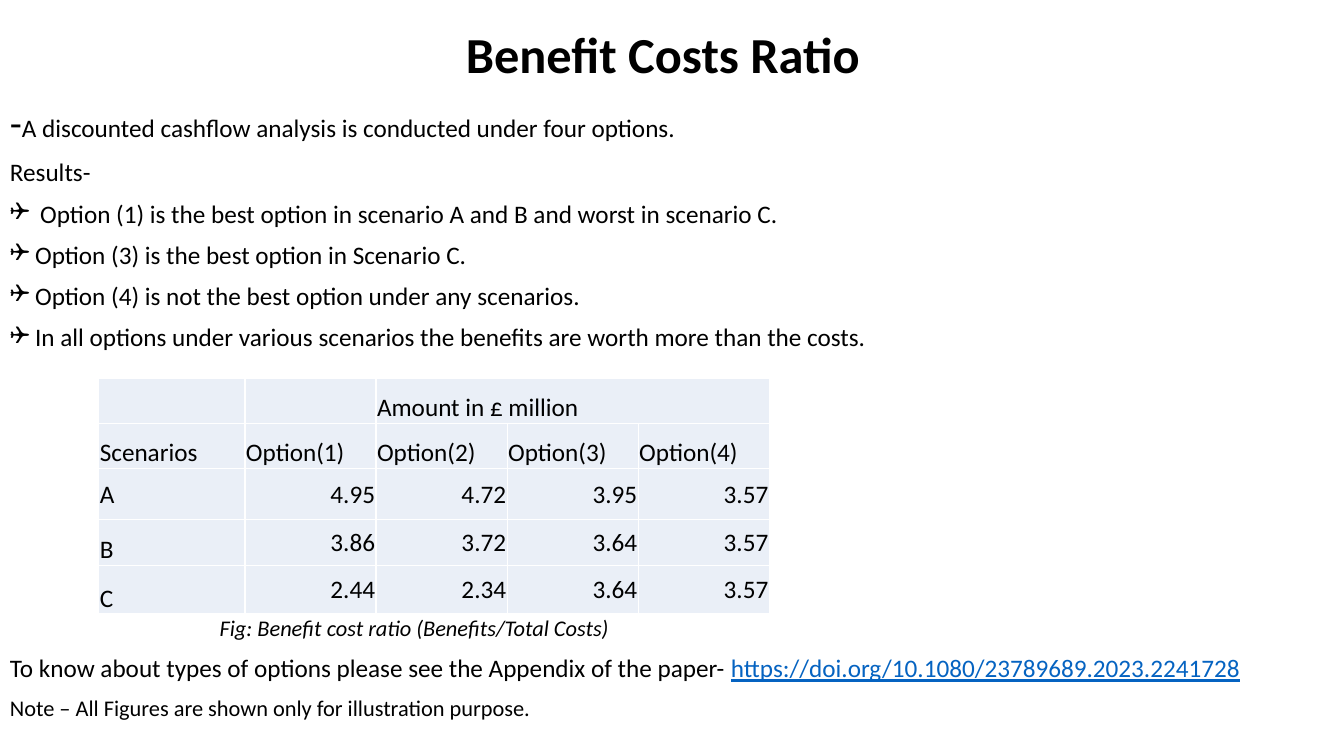
from lxml import etree
from pptx import Presentation
from pptx.dml.color import RGBColor
from pptx.enum.text import MSO_ANCHOR, PP_ALIGN
from pptx.oxml.ns import qn
from pptx.util import Inches, Pt

LEFT, CENTER, RIGHT = PP_ALIGN.LEFT, PP_ALIGN.CENTER, PP_ALIGN.RIGHT
TOP, MIDDLE, BOTTOM = MSO_ANCHOR.TOP, MSO_ANCHOR.MIDDLE, MSO_ANCHOR.BOTTOM
COLORS = {"text": "000000", "link": "0563C1", "cell": "EAEFF7", "border": "FFFFFF"}


class SlideBuilder:
    font_name = "Calibri"

    def __init__(self, slide):
        self.slide = slide

    def style(self, font, size, color="text", bold=None, italic=None, underline=None):
        font.name, font.size = self.font_name, Pt(size)
        font.bold, font.italic, font.underline = bold, italic, underline
        font.color.rgb = RGBColor.from_string(COLORS[color])

    def text_box(self, left, top, width, height, anchor=TOP):
        shape = self.slide.shapes.add_textbox(
            Inches(left), Inches(top), Inches(width), Inches(height))
        shape.text_frame.word_wrap = True
        shape.text_frame.vertical_anchor = anchor
        return shape.text_frame

    def paragraph(self, frame, runs, align=LEFT, hanging=None):
        """Add one paragraph; each run is (text, style options)."""
        first = not frame.paragraphs[0].runs
        paragraph = frame.paragraphs[0] if first else frame.add_paragraph()
        paragraph.alignment = align
        paragraph.line_spacing = 0.9
        paragraph.space_before = Pt(0 if first else 10)
        if hanging:
            properties = paragraph._p.get_or_add_pPr()
            properties.set("marL", str(Inches(hanging)))
            properties.set("indent", str(-Inches(hanging)))
            etree.SubElement(properties, qn("a:buFont"), typeface="Wingdings")
            etree.SubElement(properties, qn("a:buChar"), char="❑")
        for text, options in runs:
            run = paragraph.add_run()
            run.text = text
            if len(runs) > 1:
                self.style(run.font, **options)
        if len(runs) == 1:
            self.style(paragraph.font, **runs[0][1])

    def table(self, left, top, widths, heights, rows):
        shape = self.slide.shapes.add_table(
            len(rows), len(widths), Inches(left), Inches(top),
            Inches(sum(widths)), Inches(sum(heights)))
        table = shape.table
        table.first_row = table.horz_banding = False
        for column, width in zip(table.columns, widths):
            column.width = Inches(width)
        for row, height in zip(table.rows, heights):
            row.height = Inches(height)
        for r, values in enumerate(rows):
            for c, value in enumerate(values):
                is_number = r >= 2 and c >= 1
                anchor = MIDDLE if is_number or r == 2 else BOTTOM
                self.cell(table.cell(r, c), value, RIGHT if is_number else LEFT, anchor)
        return table

    def cell(self, cell, text, align, anchor):
        cell.margin_left = cell.margin_right = cell.margin_top = Inches(0.01)
        cell.margin_bottom = 0
        cell.vertical_anchor = anchor
        paragraph = cell.text_frame.paragraphs[0]
        paragraph.text = text
        paragraph.alignment = align
        self.style(paragraph.font, 18)
        properties = cell._tc.get_or_add_tcPr()
        for side in ("a:lnL", "a:lnR", "a:lnT", "a:lnB"):
            line = etree.SubElement(properties, qn(side), w=str(Pt(1)))
            fill = etree.SubElement(line, qn("a:solidFill"))
            etree.SubElement(fill, qn("a:srgbClr"), val=COLORS["border"])
        cell.fill.solid()
        cell.fill.fore_color.rgb = RGBColor.from_string(COLORS["cell"])


def main():
    presentation = Presentation()
    presentation.slide_width, presentation.slide_height = Inches(13.33), Inches(7.5)
    builder = SlideBuilder(presentation.slides.add_slide(presentation.slide_layouts[6]))
    body = {"size": 18}

    # Title
    title = builder.text_box(0, 0.14, 13.15, 0.85, MIDDLE)
    builder.paragraph(title, [("Benefit Costs Ratio", {"size": 36, "bold": True})], CENTER)

    # Results
    results = builder.text_box(0, 0.98, 13.15, 2.7)
    builder.paragraph(results, [
        ("-", {"size": 28}),
        ("A discounted cashflow analysis is conducted under four options.", body)])
    builder.paragraph(results, [("Results-", body)])
    for finding, hanging in (
        ("Option (1) is the best option in scenario A and B and worst in scenario C.", 0.3),
        ("Option (3) is the best option in Scenario C.", 0.25),
        ("Option (4) is not the best option under any scenarios.", 0.25),
        ("In all options under various scenarios the benefits are worth more than the costs.",
         0.25),
    ):
        builder.paragraph(results, [(finding, body)], hanging=hanging)

    # Ratio table
    ratios = builder.table(
        0.98, 3.75, [1.45] + [1.3] * 4, [0.45, 0.45, 0.5, 0.46, 0.48],
        [["", "", "Amount in £ million", "", ""],
         ["Scenarios"] + [f"Option({number})" for number in range(1, 5)],
         ["A", "4.95", "4.72", "3.95", "3.57"],
         ["B", "3.86", "3.72", "3.64", "3.57"],
         ["C", "2.44", "2.34", "3.64", "3.57"]])
    ratios.cell(0, 2).merge(ratios.cell(0, 4))

    # Caption and notes
    caption = builder.text_box(2.08, 6.07, 5.5, 0.35)
    builder.paragraph(caption, [
        ("Fig: Benefit cost ratio (Benefits/Total Costs)", {"size": 16, "italic": True})])
    notes = builder.text_box(0, 6.46, 13.15, 0.8)
    builder.paragraph(notes, [
        ("To know about types of options please see the Appendix of the paper- ", body),
        ("https://doi.org/10.1080/23789689.2023.2241728",
         {"size": 18, "color": "link", "underline": True})])
    builder.paragraph(notes, [
        ("Note – All Figures are shown only for illustration purpose.", {"size": 16})])

    presentation.save("out.pptx")


if __name__ == "__main__":
    main()
